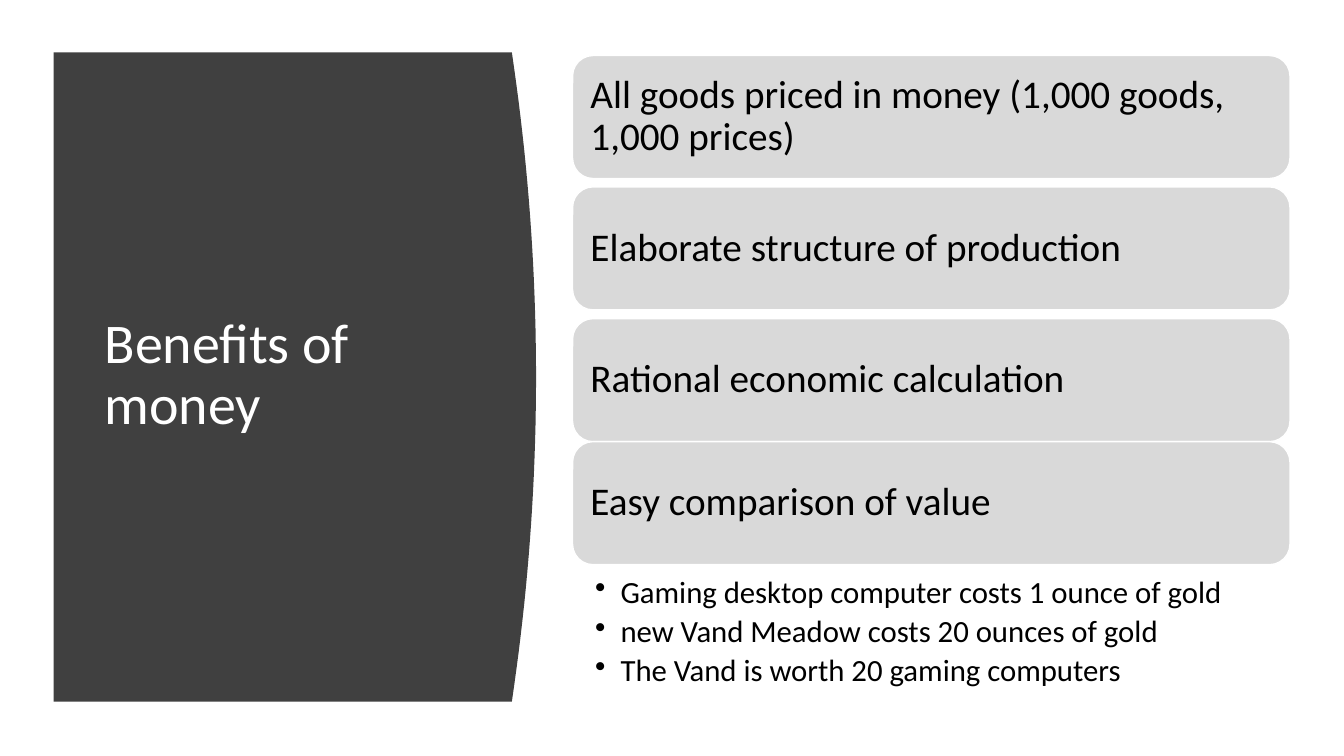
from pptx import Presentation
from pptx.dml.color import RGBColor as Rgb
from pptx.enum.shapes import MSO_SHAPE as Kind
from pptx.enum.text import MSO_ANCHOR as Anchor, PP_ALIGN as Align
from pptx.oxml.ns import qn
from pptx.util import Cm, Pt
from lxml.etree import SubElement as sub

FONT = "Calibri"
DARK, GREY, WHITE, BLACK = "404040", "D9D9D9", "FFFFFF", "000000"
LEFT, WIDTH = 14.43, 18.08
CARDS = [
    (1.4, "All goods priced in money (1,000 goods, 1,000 prices)"),
    (4.71, "Elaborate structure of production"),
    (8.03, "Rational economic calculation"),
    (11.13, "Easy comparison of value"),
]
POINTS = [
    "Gaming desktop computer costs 1 ounce of gold",
    "new Vand Meadow costs 20 ounces of gold",
    "The Vand is worth 20 gaming computers",
]


def paint(fill, color):
    fill.solid()
    fill.fore_color.rgb = Rgb.from_string(color)


def set_frame(frame, anchor, sides, ends):
    frame.word_wrap = True
    frame.vertical_anchor = anchor
    frame.margin_left = frame.margin_right = Cm(sides)
    frame.margin_top = frame.margin_bottom = Cm(ends)


def add_run(para, text, size, color):
    para.alignment = Align.LEFT
    para.line_spacing = 0.9
    run = para.add_run()
    run.text = text
    run.font.name = FONT
    run.font.size = Pt(size)
    paint(run.font.fill, color)


def add_panel(slide):
    left, top, edge, bulge, half = 1.35, 1.32, 12.9, 0.61, 8.18
    steps = 40
    curve = []
    for step in range(steps + 1):
        turn = 2 * step / steps - 1
        x = edge + bulge * (1 - turn ** 2)
        y = top + half * (1 + turn)
        curve.append((Cm(x), Cm(y)))
    form = slide.shapes.build_freeform(Cm(left), Cm(top))
    form.add_line_segments(curve + [(Cm(left), Cm(top + 2 * half))], close=True)
    panel = form.convert_to_shape()
    panel.shadow.inherit = False
    paint(panel.fill, DARK)
    panel.line.fill.background()


def add_title(slide, text):
    box = slide.shapes.add_textbox(Cm(2.39), Cm(2.82), Cm(9.5), Cm(13.3))
    set_frame(box.text_frame, Anchor.MIDDLE, 0.25, 0.13)
    add_run(box.text_frame.paragraphs[0], text, 40, WHITE)


def add_card(slide, top, text):
    card = slide.shapes.add_shape(
        Kind.ROUNDED_RECTANGLE, Cm(LEFT), Cm(top), Cm(WIDTH), Cm(3.1))
    card.shadow.inherit = False
    paint(card.fill, GREY)
    paint(card.line.fill, WHITE)
    card.line.width = Pt(1)
    set_frame(card.text_frame, Anchor.MIDDLE, 0.3, 0.3)
    add_run(card.text_frame.paragraphs[0], text, 28, BLACK)


def add_list(slide, items):
    box = slide.shapes.add_textbox(Cm(LEFT), Cm(14.43), Cm(WIDTH), Cm(3.15))
    frame = box.text_frame
    set_frame(frame, Anchor.TOP, 0.57, 0.1)
    for index, item in enumerate(items):
        para = frame.add_paragraph() if index else frame.paragraphs[0]
        add_run(para, item, 22, BLACK)
        para.space_after = Pt(4.4)
        props = para._p.get_or_add_pPr()
        props.set("marL", str(Cm(0.64)))
        props.set("indent", str(-Cm(0.64)))
        sub(props, qn("a:buChar")).set("char", "•")


def main():
    deck = Presentation()
    deck.slide_width, deck.slide_height = Cm(33.87), Cm(19.05)
    slide = deck.slides.add_slide(deck.slide_layouts[6])
    add_panel(slide)
    add_title(slide, "Benefits of money")
    for top, text in CARDS:
        add_card(slide, top, text)
    add_list(slide, POINTS)
    deck.save("out.pptx")


if __name__ == "__main__":
    main()
